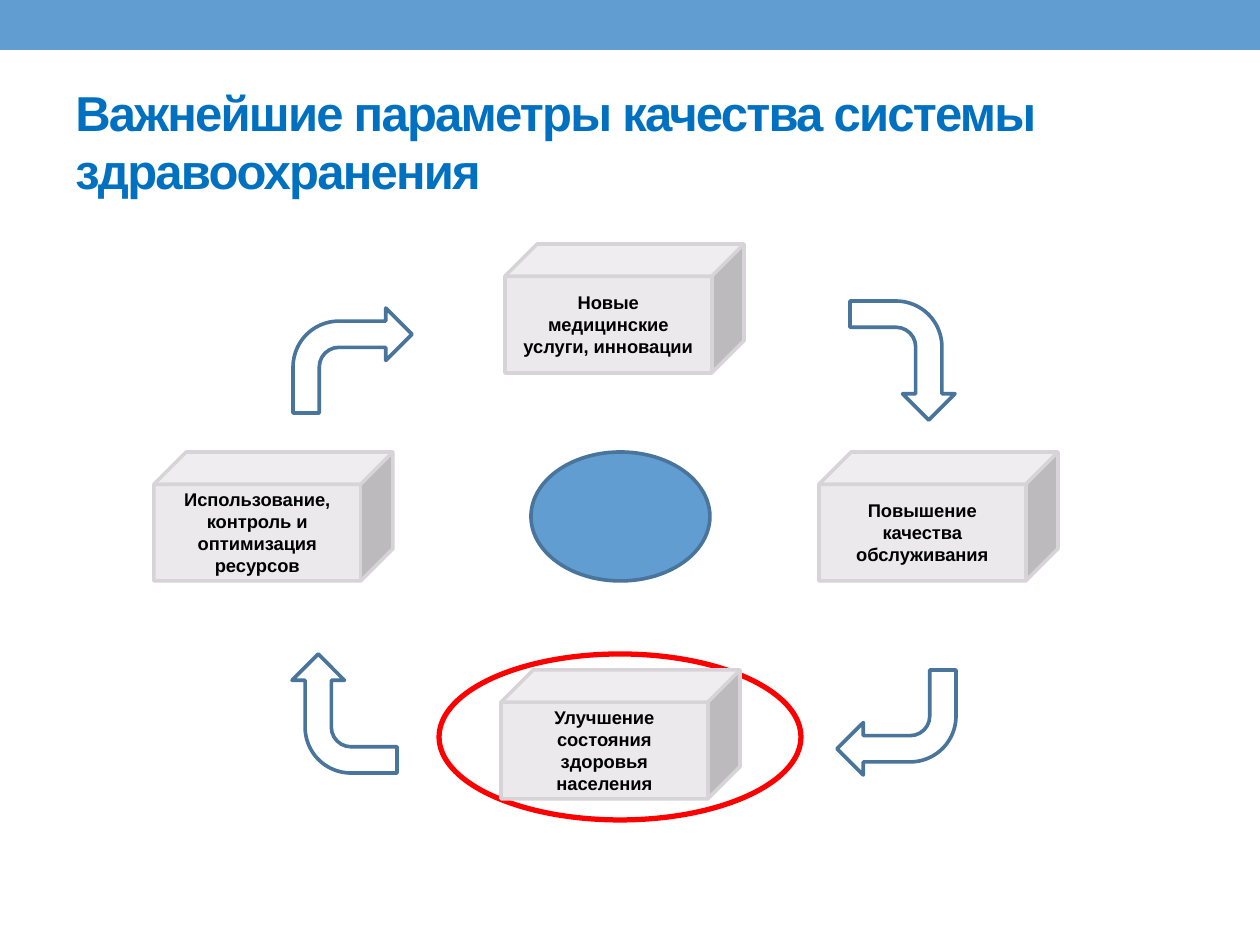
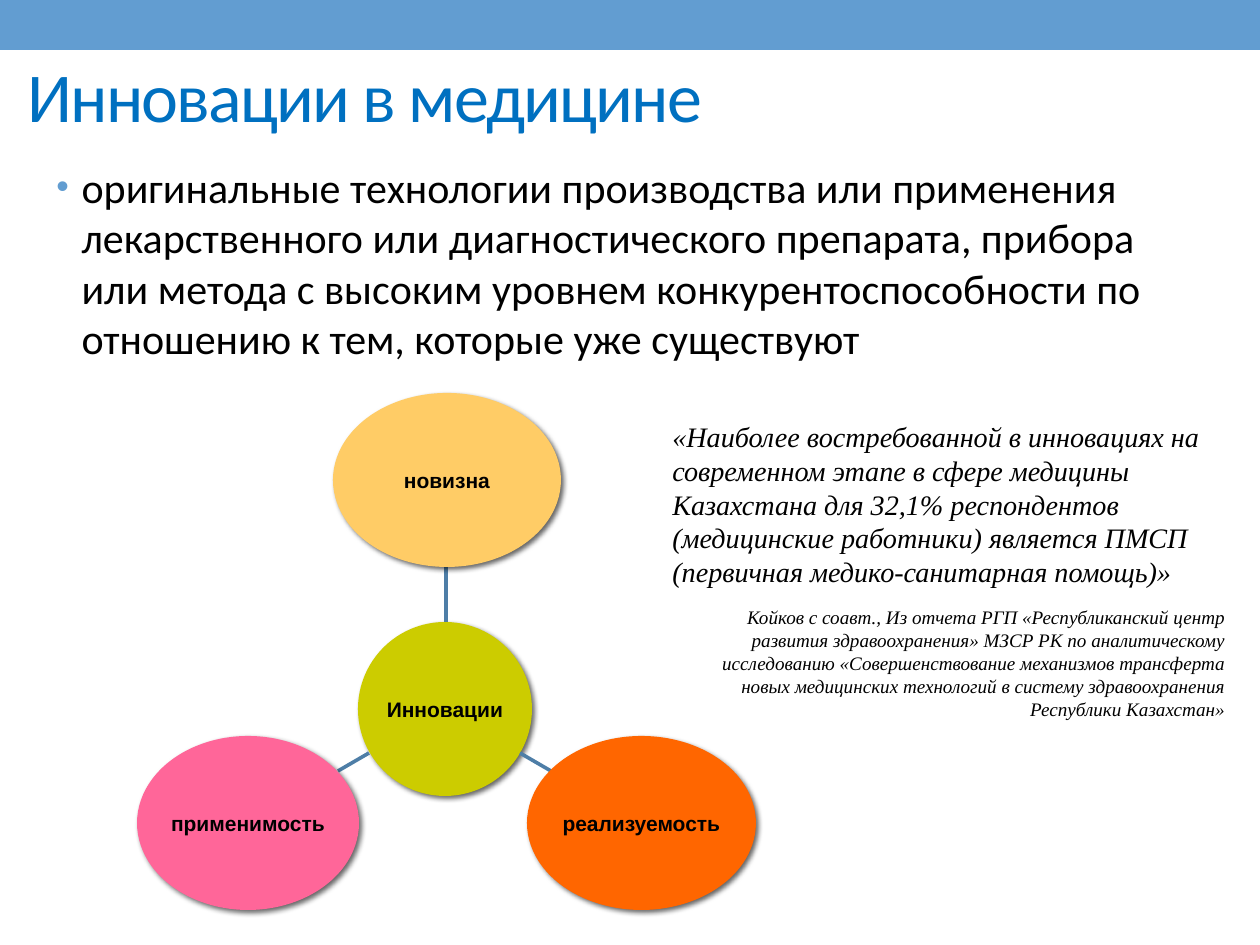
from dataclasses import dataclass

from lxml import etree
from pptx import Presentation
from pptx import util as u
from pptx.dml.color import RGBColor
from pptx.enum import shapes, text
from pptx.oxml.ns import qn


@dataclass(frozen=True)
class Theme:
    band: str = "629DD1"
    outline: str = "49749B"
    link: str = "4E7EA7"
    title: str = "0070C0"
    ink: str = "000000"
    cube: str = "EBE9EC"
    cube_line: str = "D8D3D9"
    accent: str = "FF0000"
    hub: str = "CCCC00"
    sans: str = "Arial"
    body: str = "Calibri"
    serif: str = "Times New Roman"
    line: float = 2.08
    accent_line: float = 3
    title_bold_size: float = 28
    title_size: float = 40
    body_size: float = 24
    quote_size: float = 16.1
    credit_size: float = 10.9
    cube_size: float = 10.5
    node_size: float = 12


T = Theme()
PX = 914400 / 126
G = shapes.MSO_SHAPE
AL = text.PP_ALIGN
ANC = text.MSO_ANCHOR


def px(*values):
    return [round(v * PX) for v in values]


def rgb(color):
    return RGBColor.from_string(color)


def add_text(tf, words, first=True, size=12, font=T.sans, color=T.ink, bold=False,
             italic=False, align=AL.LEFT, spacing=0, before=0):
    p = tf.paragraphs[0] if first else tf.add_paragraph()
    p.alignment = align
    p.space_before = u.Pt(before)
    r = p.add_run()
    r.text = words
    f = r.font
    f.size, f.name, f.bold, f.italic = u.Pt(size), font, bold, italic
    f.color.rgb = rgb(color)
    if spacing:
        r._r.get_or_add_rPr().set("spc", str(spacing * 100))
    return p


def add_box(s, box, anchor=ANC.TOP):
    tf = s.shapes.add_textbox(*px(*box)).text_frame
    tf.word_wrap = True
    tf.vertical_anchor = anchor
    return tf


def add_figure(s, kind, box, fill=None, line=None, width=T.line):
    sp = s.shapes.add_shape(kind, *px(*box))
    sp.shadow.inherit = False
    if fill:
        sp.fill.solid()
        sp.fill.fore_color.rgb = rgb(fill)
    else:
        sp.fill.background()
    if line:
        sp.line.color.rgb = rgb(line)
        sp.line.width = u.Pt(width)
    else:
        sp.line.fill.background()
    sp.text_frame.vertical_anchor = ANC.MIDDLE
    return sp


def add_shadow(sp):
    effects = sp._element.spPr.find(qn("a:effectLst"))
    shadow = etree.SubElement(effects, qn("a:outerShdw"), blurRad=str(u.Pt(3)),
                              dist=str(u.Pt(2)), dir="2700000", algn="ctr", rotWithShape="0")
    color = etree.SubElement(shadow, qn("a:srgbClr"), val=T.ink)
    etree.SubElement(color, qn("a:alpha"), val="60000")


def add_bullet(p):
    pPr = p._p.get_or_add_pPr()
    pPr.set("marL", str(u.Inches(0.2)))
    pPr.set("indent", str(-u.Inches(0.2)))
    color = etree.SubElement(pPr, qn("a:buClr"))
    etree.SubElement(color, qn("a:srgbClr"), val=T.band)
    etree.SubElement(pPr, qn("a:buSzPct"), val="85000")
    etree.SubElement(pPr, qn("a:buFont"), typeface=T.sans)
    etree.SubElement(pPr, qn("a:buChar"), char="•")


def new_slide(prs, title, box, **fmt):
    s = prs.slides.add_slide(prs.slide_layouts[6])
    add_figure(s, G.RECTANGLE, (0, 0, 1260, 50), fill=T.band)
    add_text(add_box(s, box, ANC.MIDDLE), title, color=T.title, spacing=-1, **fmt)
    return s


def quality_cycle(s, box):
    left, top, _, _ = box
    add_figure(s, G.OVAL, (left + 285, top + 410, 362, 166),
               line=T.accent, width=T.accent_line)
    cubes = [
        (351, 0, "Новые медицинские услуги, инновации"),
        (665, 208, "Повышение качества обслуживания"),
        (0, 208, "Использование, контроль и оптимизация ресурсов"),
        (347, 426, "Улучшение состояния здоровья населения"),
    ]
    for x, y, words in cubes:
        sp = add_figure(s, G.CUBE, (left + x, top + y, 239, 129), T.cube, T.cube_line)
        sp.text_frame.word_wrap = True
        add_text(sp.text_frame, words, size=T.cube_size, bold=True, align=AL.CENTER)
    arrows = [(139, 64), (689, 64), (683, 426), (131, 417)]
    for turn, (x, y) in enumerate(arrows):
        sp = add_figure(s, G.BENT_ARROW, (left + x, top + y, 119, 105), line=T.outline)
        sp.rotation = 90 * turn
    add_figure(s, G.OVAL, (left + 377, top + 208, 179, 129), T.band, T.outline)


def innovation_diagram(s, box):
    left, top, _, _ = box

    def add_node(x, y, width, fill, words):
        sp = add_figure(s, G.OVAL, (left + x, top + y, width, 174), fill)
        add_shadow(sp)
        tf = sp.text_frame
        tf.margin_left = tf.margin_right = tf.margin_top = tf.margin_bottom = u.Inches(0.01)
        tf.word_wrap = False
        add_text(tf, words, size=T.node_size, bold=True, align=AL.CENTER)

    add_node(221, 229, 174, T.hub, "Инновации")
    nodes = [
        (196, 0, 228, "FFCC66", "новизна", (309, 229, 309, 174)),
        (390, 343, 229, "FF6600", "реализуемость", (383, 360, 414, 378)),
        (0, 343, 222, "FF6699", "применимость", (232, 360, 201, 378)),
    ]
    for x, y, width, fill, words, (x1, y1, x2, y2) in nodes:
        link = s.shapes.add_connector(
            shapes.MSO_CONNECTOR.STRAIGHT,
            *px(left + x1, top + y1, left + x2, top + y2))
        link.line.color.rgb = rgb(T.link)
        link.line.width = u.Pt(T.line)
        etree.SubElement(link._element.spPr, qn("a:effectLst"))
        add_node(x, y, width, fill, words)


def definition(s, box):
    p = add_text(add_box(s, box),
                 "оригинальные технологии производства или применения лекарственного или "
                 "диагностического препарата, прибора или метода с высоким уровнем "
                 "конкурентоспособности по отношению к тем, которые уже существуют",
                 size=T.body_size, font=T.body)
    add_bullet(p)


def quotation(s, box):
    tf = add_box(s, box)
    add_text(tf, "«Наиболее востребованной в инновациях на современном этапе в сфере медицины "
                 "Казахстана для 32,1% респондентов (медицинские работники) является ПМСП "
                 "(первичная медико-санитарная помощь)»",
             size=T.quote_size, font=T.serif, italic=True)
    add_text(tf, "Койков с соавт., Из отчета РГП «Республиканский центр развития "
                 "здравоохранения» МЗСР РК по аналитическому исследованию "
                 "«Совершенствование механизмов трансферта новых медицинских технологий "
                 "в систему здравоохранения Республики Казахстан»",
             first=False, size=T.credit_size, font=T.serif, italic=True,
             align=AL.RIGHT, before=10)


def quality_slide(prs):
    s = new_slide(prs, "Важнейшие параметры качества системы здравоохранения",
                  (63, 73, 1134, 136), size=T.title_bold_size, bold=True)
    quality_cycle(s, (154, 244, 904, 576))


def innovation_slide(prs):
    s = new_slide(prs, "Инновации в медицине", (15, 45, 1134, 100),
                  size=T.title_size, font=T.body)
    definition(s, (44, 155, 1134, 672))
    innovation_diagram(s, (137, 393, 619, 517))
    quotation(s, (660, 413, 577, 328))


def main():
    prs = Presentation()
    prs.slide_width, prs.slide_height = px(1260, 945)
    quality_slide(prs)
    innovation_slide(prs)
    prs.save("out.pptx")


if __name__ == "__main__":
    main()
